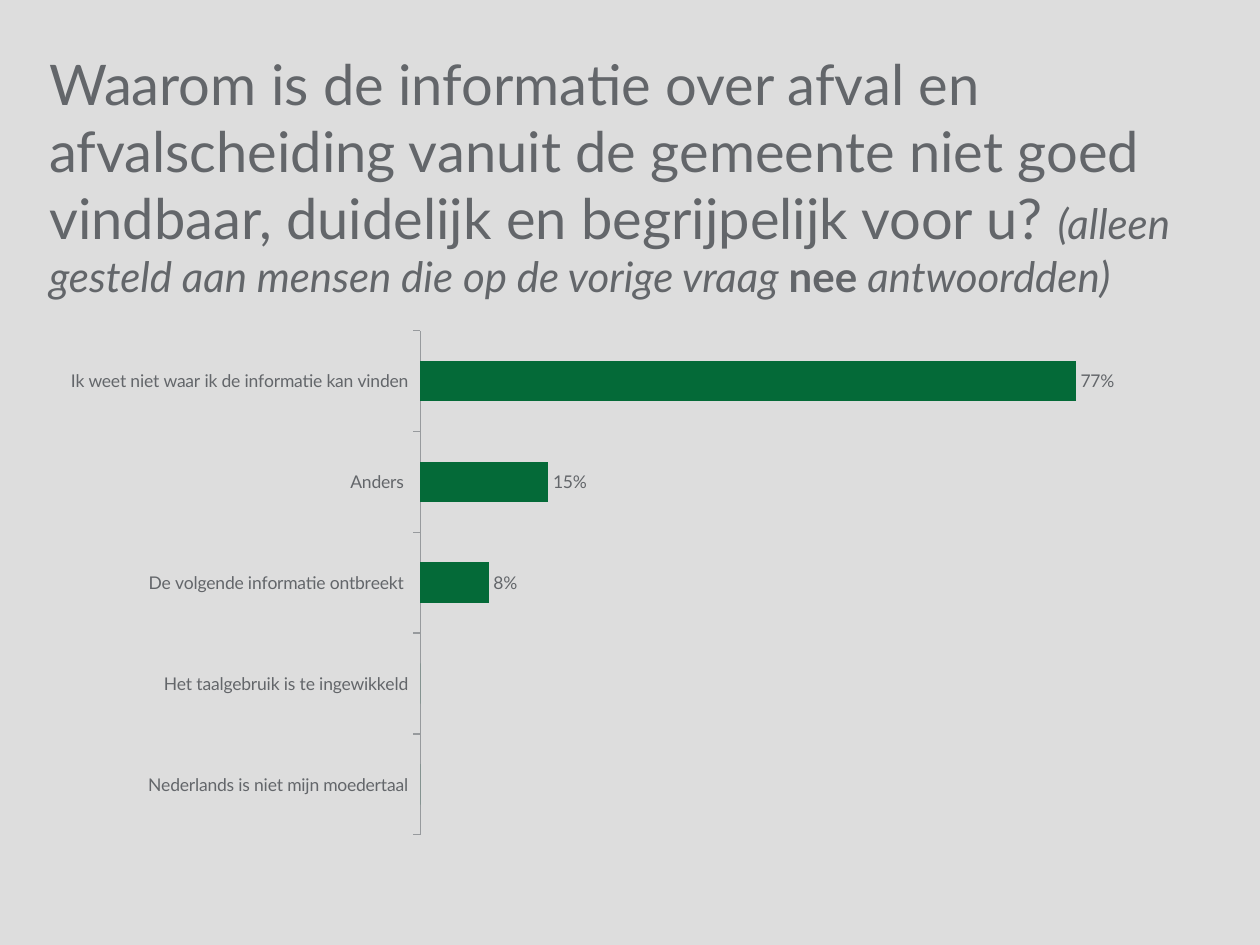
from pptx import Presentation
from pptx import util as u
from pptx.chart import data
from pptx.dml.color import RGBColor
from pptx.enum import chart as ch, text
from pptx.oxml import parse_xml
from pptx.oxml.ns import nsdecls

HUES = {"back": "DDDDDD", "text": "63666A", "bar": "046A38", "axis": "979A9D"}
FACE = "Lato"
TITLE = [
    ("Waarom is de informatie over afval en afvalscheiding vanuit de gemeente "
     "niet goed vindbaar, duidelijk en begrijpelijk voor u? ", 32, False, False),
    ("(alleen gesteld aan mensen die op de vorige vraag ", 24, False, True),
    ("nee ", 24, True, False),
    ("antwoordden)", 24, False, True),
]
ANSWERS = [
    ("Ik weet niet waar ik de informatie kan vinden", 0.77),
    ("Anders ", 0.15),
    ("De volgende informatie ontbreekt ", 0.08),
    ("Het taalgebruik is te ingewikkeld", 0),
    ("Nederlands is niet mijn moedertaal", 0),
]


def hue(name):
    return RGBColor.from_string(HUES[name])


def style(font, size):
    font.name = FACE
    font.size = u.Pt(size)
    font.color.rgb = hue("text")


def add_title(slide, box):
    frame = slide.shapes.add_textbox(*map(u.Inches, box)).text_frame
    frame.word_wrap = True
    frame.vertical_anchor = text.MSO_ANCHOR.TOP
    frame.margin_left = frame.margin_right = 0
    frame.margin_top = frame.margin_bottom = 0
    line = frame.paragraphs[0]
    for words, size, bold, slant in TITLE:
        run = line.add_run()
        run.text = words
        style(run.font, size)
        run.font.bold = bold
        run.font.italic = slant


def set_plot(chart, left, top, width, height):
    area = chart.plots[0]._element.getparent()
    for old in area.findall("{*}layout"):
        area.remove(old)
    area.insert(0, parse_xml(
        f'<c:layout {nsdecls("c")}><c:manualLayout><c:layoutTarget val="inner"/>'
        '<c:xMode val="edge"/><c:yMode val="edge"/>'
        f'<c:x val="{left}"/><c:y val="{top}"/>'
        f'<c:w val="{width}"/><c:h val="{height}"/>'
        '</c:manualLayout></c:layout>'))


def add_bars(slide, box):
    table = data.CategoryChartData(number_format="0%")
    table.categories = [name for name, _ in ANSWERS]
    table.add_series("Series 1", [part for _, part in ANSWERS])
    chart = slide.shapes.add_chart(
        ch.XL_CHART_TYPE.BAR_CLUSTERED, *map(u.Inches, box), table).chart
    chart.has_legend = chart.has_title = False
    style(chart.font, 10)

    cats = chart.category_axis
    cats.reverse_order = True
    cats.tick_label_position = ch.XL_TICK_LABEL_POSITION.LOW
    cats.major_tick_mark = ch.XL_TICK_MARK.OUTSIDE
    cats.format.line.color.rgb = hue("axis")
    cats.format.line.width = u.Pt(0.75)
    vals = chart.value_axis
    vals.visible = vals.has_major_gridlines = False
    vals.minimum_scale, vals.maximum_scale = 0, 0.9

    plot = chart.plots[0]
    plot.gap_width = 150
    plot.vary_by_categories = False
    bars = plot.series[0]
    bars.format.fill.solid()
    bars.format.fill.fore_color.rgb = hue("bar")
    for spot, (_, part) in enumerate(ANSWERS):
        if part:
            label = bars.points[spot].data_label
            label.position = ch.XL_LABEL_POSITION.OUTSIDE_END
            style(label.font, 10)
    bars.data_labels.show_value = False
    set_plot(chart, 0.32, 0.02, 0.66, 0.96)


def main():
    deck = Presentation()
    deck.slide_width, deck.slide_height = u.Inches(10), u.Inches(7.5)
    slide = deck.slides.add_slide(deck.slide_layouts[6])
    slide.background.fill.solid()
    slide.background.fill.fore_color.rgb = hue("back")
    add_title(slide, (0.39, 0.39, 9.21, 1.18))
    add_bars(slide, (0.39, 2.54, 9.21, 4.17))
    deck.save("out.pptx")


if __name__ == "__main__":
    main()
